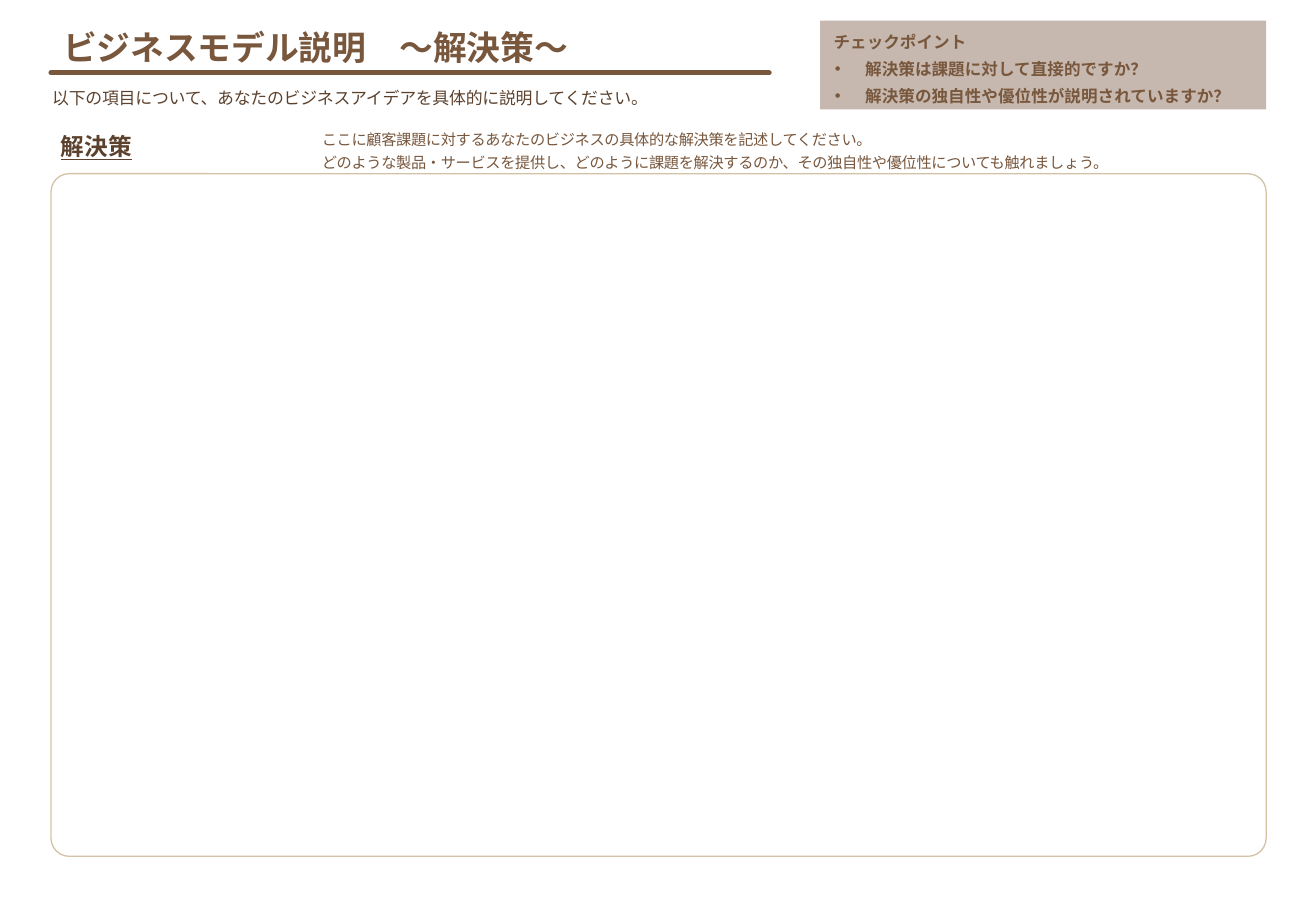
from lxml.etree import SubElement
from pptx import Presentation
from pptx.dml.color import RGBColor
from pptx.enum.shapes import MSO_CONNECTOR, MSO_SHAPE
from pptx.enum.text import MSO_ANCHOR, MSO_AUTO_SIZE, PP_ALIGN
from pptx.oxml.ns import qn
from pptx.util import Inches, Pt

BROWN = RGBColor(0x78, 0x57, 0x3D)
DARK_BROWN = RGBColor(0x5C, 0x42, 0x2E)
TAUPE = RGBColor(0xC6, 0xB8, 0xAE)
SAND = RGBColor(0xD4, 0xC2, 0xA6)
WHITE = RGBColor(0xFF, 0xFF, 0xFF)
FONT = "Noto Sans CJK JP"
LEFT, RIGHT = 0.42, 10.42


class WorksheetSlide:
    """Holds the text style and the slide being built."""

    def __init__(self, deck):
        self.slide = deck.slides.add_slide(deck.slide_layouts[1])
        self.title = self.slide.shapes.title
        self.body = self.slide.placeholders[1]

    def place(self, box, left, top, width, height, insets=(0.1, 0.05, 0.1, 0.05)):
        box.left, box.top = Inches(left), Inches(top)
        box.width, box.height = Inches(width), Inches(height)
        frame = box.text_frame
        frame.word_wrap = True
        frame.auto_size = MSO_AUTO_SIZE.NONE
        frame.vertical_anchor = MSO_ANCHOR.TOP
        (frame.margin_left, frame.margin_top,
         frame.margin_right, frame.margin_bottom) = map(Inches, insets)

    def text_box(self, left, top, width, height, **options):
        box = self.slide.shapes.add_textbox(0, 0, 0, 0)
        self.place(box, left, top, width, height, **options)
        return box

    def add_lines(self, box, lines, size, color, bold=False, underline=False,
                  tracking=0, line_spacing=1.0, before=0, align=PP_ALIGN.LEFT,
                  margin=0, bullets_from=None):
        frame = box.text_frame
        for index, line in enumerate(lines):
            para = frame.add_paragraph() if index else frame.paragraphs[0]
            para.alignment = align
            para.line_spacing = line_spacing
            para.space_before = Pt(before)
            bulleted = bullets_from is not None and index >= bullets_from
            self.indent(para, margin, bulleted)
            span = para.add_run()
            span.text = line
            font = span.font
            font.name, font.size, font.bold = FONT, Pt(size), bold
            font.underline = underline
            font.color.rgb = color
            properties = span._r.get_or_add_rPr()
            properties.set("spc", str(round(tracking * 100)))
            SubElement(properties, qn("a:ea")).set("typeface", FONT)

    def indent(self, para, margin, bulleted):
        properties = para._p.get_or_add_pPr()
        properties.set("marL", str(Inches(0.27 if bulleted else margin)))
        properties.set("indent", str(Inches(-0.25 if bulleted else 0)))
        if bulleted:
            SubElement(properties, qn("a:buChar")).set("char", "•")
        else:
            SubElement(properties, qn("a:buNone"))

    def rule(self, left, right, top, color, weight):
        line = self.slide.shapes.add_connector(
            MSO_CONNECTOR.STRAIGHT, Inches(left), Inches(top), Inches(right), Inches(top))
        line.line.color.rgb = color
        line.line.width = Pt(weight)
        properties = line._element.spPr
        properties.find(qn("a:ln")).set("cap", "rnd")
        SubElement(properties, qn("a:effectLst"))

    def answer_frame(self, left, top, width, height, radius):
        frame = self.slide.shapes.add_shape(
            MSO_SHAPE.ROUNDED_RECTANGLE,
            Inches(left), Inches(top), Inches(width), Inches(height))
        frame.adjustments[0] = radius / min(width, height)
        frame.shadow.inherit = False
        frame.fill.solid()
        frame.fill.fore_color.rgb = WHITE
        frame.line.color.rgb = SAND
        frame.line.width = Pt(0.77)


def main():
    deck = Presentation()
    deck.slide_width, deck.slide_height = Inches(10.83), Inches(7.5)
    page = WorksheetSlide(deck)

    # Answer area
    page.answer_frame(LEFT, 1.43, RIGHT - LEFT, 5.62, radius=0.15)

    # Heading
    page.place(page.title, LEFT, 0.17, 5.83, 0.44)
    page.add_lines(page.title, ["ビジネスモデル説明　～解決策～"], 20, BROWN,
                   bold=True, tracking=-0.1)
    page.rule(LEFT, 6.33, 0.6, BROWN, 3)
    intro = page.text_box(LEFT, 0.7, 6.42, 0.18, insets=(0, 0.02, 0, 0))
    page.add_lines(intro, ["以下の項目について、あなたのビジネスアイデアを具体的に説明してください。"],
                   10, DARK_BROWN, tracking=-0.1, before=1.1, margin=0.01)

    # Checkpoints
    page.place(page.body, 6.75, 0.17, RIGHT - 6.75, 0.73)
    page.body.fill.solid()
    page.body.fill.fore_color.rgb = TAUPE
    page.add_lines(page.body, ["チェックポイント",
                               "解決策は課題に対して直接的ですか？",
                               "解決策の独自性や優位性が説明されていますか？"],
                   9.8, BROWN, bold=True, line_spacing=1.28, before=0.8,
                   align=PP_ALIGN.JUSTIFY, margin=0.01, bullets_from=1)

    # Section label and guidance
    label = page.text_box(0.4, 1.04, 1.92, 0.34)
    page.add_lines(label, ["解決策"], 14, DARK_BROWN, bold=True, underline=True, tracking=0.2)
    guidance = page.text_box(2.4, 0.98, 7.7, 0.47)
    page.add_lines(guidance,
                   ["ここに顧客課題に対するあなたのビジネスの具体的な解決策を記述してください。",
                    "どのような製品‧サービスを提供し、どのように課題を解決するのか、"
                    "その独自性や優位性についても触れましょう。"],
                   9, BROWN, tracking=-0.2, line_spacing=1.28, margin=0.15)

    deck.save("out.pptx")


if __name__ == "__main__":
    main()
